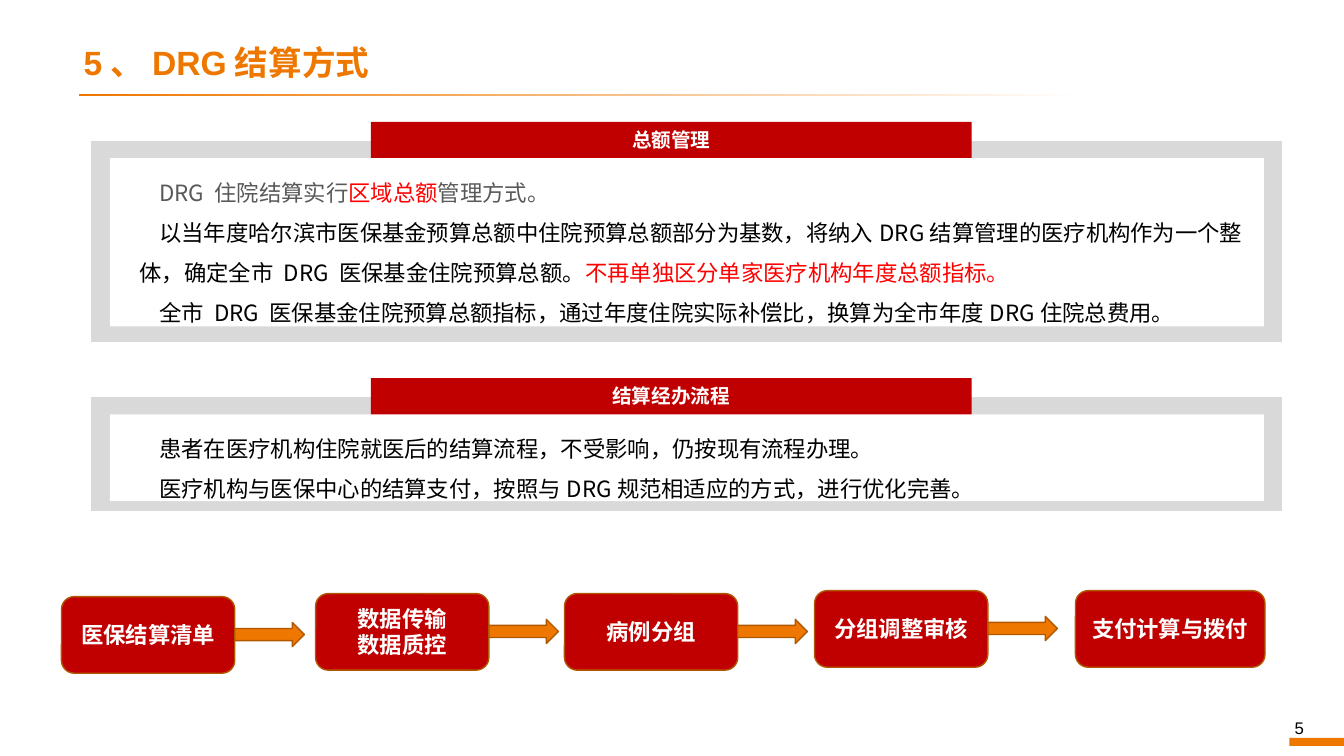
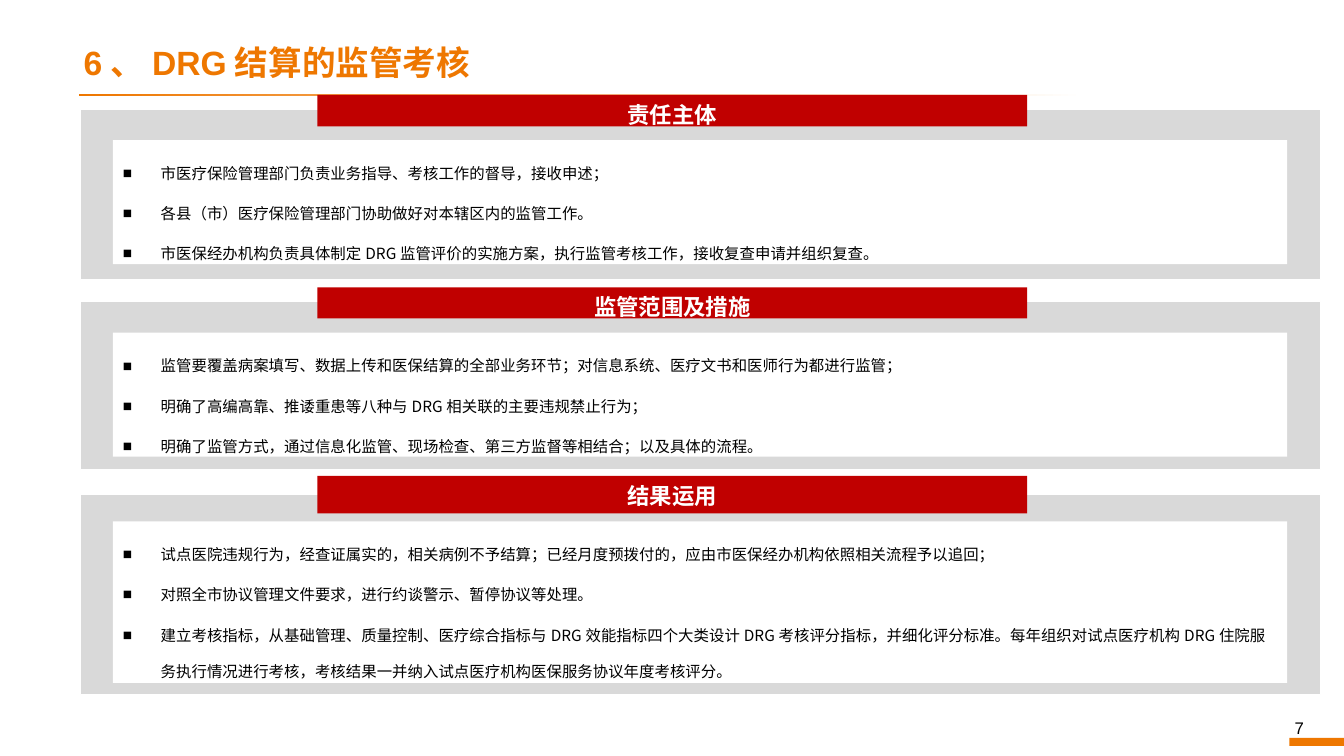
"""Build two slides on DRG settlement and its supervision."""
import pptx
import pptx.dml.color
import pptx.enum.shapes
import pptx.enum.text
import pptx.oxml
import pptx.oxml.ns
import pptx.util

Pt = pptx.util.Pt
colour = pptx.dml.color.RGBColor.from_string
SHAPE = pptx.enum.shapes.MSO_SHAPE
ANCHOR = pptx.enum.text.MSO_ANCHOR
ALIGN = pptx.enum.text.PP_ALIGN
NO_FIT = pptx.enum.text.MSO_AUTO_SIZE.NONE
DRAWING = pptx.oxml.ns.nsdecls("a")

ORANGE, BROWN, RED, BRIGHT = "EE7700", "B05800", "C00000", "FF0000"
GREY, DARK, BLACK, WHITE = "D9D9D9", "595959", "000000", "FFFFFF"
LATIN, CHINESE = "Arial", "Noto Sans CJK SC"

TITLE = {
    "frame": {"vertical_anchor": ANCHOR.BOTTOM},
    "para": {"alignment": ALIGN.LEFT, "line_spacing": 0.9},
    "font": {"name": LATIN, "size": Pt(24), "bold": True},
    "colour": ORANGE,
}
NUMBER = {
    "frame": {"vertical_anchor": ANCHOR.MIDDLE, "margin_top": 0, "margin_bottom": 0},
    "para": {"alignment": ALIGN.CENTER},
    "font": {"name": LATIN, "size": Pt(12)},
    "colour": BLACK,
}
STEP = {
    "frame": {"vertical_anchor": ANCHOR.MIDDLE},
    "para": {"alignment": ALIGN.CENTER, "line_spacing": Pt(18.6)},
    "font": {"name": LATIN, "size": Pt(16), "bold": True},
    "colour": WHITE,
}
BANNER = {
    "frame": {"vertical_anchor": ANCHOR.TOP, "margin_top": Pt(4.6)},
    "para": {"alignment": ALIGN.CENTER},
    "font": {"name": CHINESE, "bold": True},
    "colour": WHITE,
}
PROSE = {
    "frame": {"vertical_anchor": ANCHOR.TOP, "margin_top": Pt(5.6)},
    "para": {"alignment": ALIGN.LEFT, "line_spacing": Pt(28.6), "space_before": Pt(0)},
    "font": {"name": CHINESE, "size": Pt(16), "bold": False},
    "colour": BLACK,
    "indent": (Pt(14), Pt(14)),
}
BULLETS = {
    "frame": {"vertical_anchor": ANCHOR.TOP, "margin_top": Pt(4.2)},
    "para": {"alignment": ALIGN.LEFT, "line_spacing": Pt(26.1), "space_before": Pt(0)},
    "font": {"name": CHINESE, "size": Pt(11), "bold": False},
    "colour": BLACK,
    "indent": (Pt(27), Pt(-27)),
    "bullet": "■",
    "gap": Pt(2.6),
}


def add_box(page, kind, place, fill, line=None):
    """Add a flat preset shape."""
    box = page.shapes.add_shape(kind, *map(Pt, place))
    box.shadow.inherit = False
    box.fill.solid()
    box.fill.fore_color.rgb = colour(fill)
    if line:
        box.line.color.rgb = colour(line)
        box.line.width = Pt(1)
    else:
        box.line.fill.background()
    return box


def write(box, paragraphs, look):
    """Fill a box with paragraphs, each a list of (text, colour) spans or one string."""
    frame = box.text_frame
    frame.word_wrap = True
    frame.auto_size = NO_FIT
    for name, value in look["frame"].items():
        setattr(frame, name, value)
    for index, content in enumerate(paragraphs):
        para = frame.add_paragraph() if index else frame.paragraphs[0]
        if "indent" in look:
            props = para._p.get_or_add_pPr()
            left, first = look["indent"]
            props.set("marL", str(int(left)))
            props.set("indent", str(int(first)))
            marks = [f"<a:buNone {DRAWING}/>"]
            if "bullet" in look:
                marks = [
                    f'<a:buFont {DRAWING} typeface="{LATIN}"/>',
                    f'<a:buChar {DRAWING} char="{look["bullet"]}"/>',
                ]
            for mark in marks:
                props.append(pptx.oxml.parse_xml(mark))
        for name, value in look["para"].items():
            setattr(para, name, value)
        if index and "gap" in look:
            para.space_before = look["gap"]
        if isinstance(content, str):
            content = [(content, look["colour"])]
        for text, shade in content:
            span = para.add_run()
            span.text = text
            for name, value in look["font"].items():
                setattr(span.font, name, value)
            span.font.color.rgb = colour(shade)
            east = pptx.oxml.parse_xml(f'<a:ea {DRAWING} typeface="{CHINESE}"/>')
            span._r.get_or_add_rPr().append(east)


SETTLEMENT = {
    "title": "5、DRG结算方式",
    "number": "5",
    "look": PROSE,
    "banner_size": Pt(14),
    "frame_x": (64.8, 851.8),
    "banner_x": (265, 429.1),
    "body_x": (78.5, 824.4),
    "panels": [
        {
            "heading": "总额管理",
            "banner_y": (87.1, 39.6),
            "frame_y": (100.1, 144.7),
            "body_y": (113, 120.2),
            "content": [
                [("DRG 住院结算实行", DARK), ("区域总额", BRIGHT), ("管理方式。", DARK)],
                [
                    ("以当年度哈尔滨市医保基金预算总额中住院预算总额部分为基数，将纳入DRG结算管理的医疗机构作为一个整体，确定全市 DRG 医保基金住院预算总额。", BLACK),
                    ("不再单独区分单家医疗机构年度总额指标。", BRIGHT),
                ],
                "全市 DRG 医保基金住院预算总额指标，通过年度住院实际补偿比，换算为全市年度DRG住院总费用。",
            ],
        },
        {
            "heading": "结算经办流程",
            "banner_y": (270, 39.6),
            "frame_y": (283, 82.8),
            "body_y": (296, 61.9),
            "content": [
                "患者在医疗机构住院就医后的结算流程，不受影响，仍按现有流程办理。",
                "医疗机构与医保中心的结算支付，按照与DRG规范相适应的方式，进行优化完善。",
            ],
        },
    ],
    "steps": [
        (["医保结算清单"], 43.9, 426.2, 123.8),
        (["数据传输", "数据质控"], 225.4, 424, 123.8),
        (["病例分组"], 403.2, 424, 123.8),
        (["分组调整审核"], 581.8, 421.9, 123.8),
        (["支付计算与拨付"], 768.2, 421.9, 135.4),
    ],
}
SUPERVISION = {
    "title": "6、DRG结算的监管考核",
    "number": "7",
    "look": BULLETS,
    "banner_size": Pt(16),
    "frame_x": (57.6, 885.6),
    "banner_x": (226.8, 506.9),
    "body_x": (80.6, 838.8),
    "panels": [
        {
            "heading": "责任主体",
            "banner_y": (67.7, 22.6),
            "frame_y": (78, 121.5),
            "body_y": (100.1, 88.6),
            "content": [
                "市医疗保险管理部门负责业务指导、考核工作的督导，接收申述；",
                "各县（市）医疗保险管理部门协助做好对本辖区内的监管工作。",
                "市医保经办机构负责具体制定DRG监管评价的实施方案，执行监管考核工作，接收复查申请并组织复查。",
            ],
        },
        {
            "heading": "监管范围及措施",
            "banner_y": (205.2, 22.3),
            "frame_y": (215.3, 120.2),
            "body_y": (237.6, 88.6),
            "content": [
                "监管要覆盖病案填写、数据上传和医保结算的全部业务环节；对信息系统、医疗文书和医师行为都进行监管；",
                "明确了高编高靠、推诿重患等八种与DRG相关联的主要违规禁止行为；",
                "明确了监管方式，通过信息化监管、现场检查、第三方监督等相结合；以及具体的流程。",
            ],
        },
        {
            "heading": "结果运用",
            "banner_y": (340, 26.8),
            "frame_y": (352.8, 143.3),
            "body_y": (372.4, 115.4),
            "content": [
                "试点医院违规行为，经查证属实的，相关病例不予结算；已经月度预拨付的，应由市医保经办机构依照相关流程予以追回；",
                "对照全市协议管理文件要求，进行约谈警示、暂停协议等处理。",
                "建立考核指标，从基础管理、质量控制、医疗综合指标与DRG效能指标四个大类设计DRG考核评分指标，并细化评分标准。每年组织对试点医疗机构DRG住院服务执行情况进行考核，考核结果一并纳入试点医疗机构医保服务协议年度考核评分。",
            ],
        },
    ],
    "steps": [],
}

deck = pptx.Presentation()
deck.slide_width, deck.slide_height = Pt(960), Pt(540)
layout = deck.slide_layouts.get_by_name("Comparison")
pages = [deck.slides.add_slide(layout) for topic in (SETTLEMENT, SUPERVISION)]

title_rule = add_box(pages[0], SHAPE.RECTANGLE, (56.4, 67, 718, 1.4), ORANGE)
title_rule.fill.gradient()
title_rule.fill.gradient_angle = 0
for stop, shade in zip(title_rule.fill.gradient_stops, (ORANGE, WHITE)):
    stop.color.rgb = colour(shade)
corner_bar = add_box(pages[0], SHAPE.RECTANGLE, (921, 527, 39, 5.8), ORANGE)
for shared in (title_rule, corner_bar):
    layout.shapes._spTree.append(shared._element)

for page, topic in zip(pages, (SETTLEMENT, SUPERVISION)):
    title, *bodies = page.placeholders
    title.left, title.top, title.width, title.height = map(Pt, (52.6, 0, 776.2, 62.6))
    write(title, [topic["title"]], TITLE)
    number = page.shapes.add_textbox(*map(Pt, (903.6, 512.6, 49, 14.4)))
    write(number, [topic["number"]], NUMBER)

    for panel, body in zip(topic["panels"], bodies):
        places = {}
        for part in ("frame", "banner", "body"):
            (left, width), (top, height) = topic[part + "_x"], panel[part + "_y"]
            places[part] = (left, top, width, height)
        add_box(page, SHAPE.RECTANGLE, places["frame"], GREY, WHITE)
        banner = add_box(page, SHAPE.RECTANGLE, places["banner"], RED)
        size = topic["banner_size"]
        heading_look = {
            **BANNER,
            "para": {**BANNER["para"], "line_spacing": Pt(round(size.pt * 1.19, 1))},
            "font": {**BANNER["font"], "size": size},
        }
        write(banner, [panel["heading"]], heading_look)
        body.left, body.top, body.width, body.height = map(Pt, places["body"])
        body.fill.solid()
        body.fill.fore_color.rgb = colour(WHITE)
        write(body, panel["content"], topic["look"])
        page.shapes._spTree.append(body._element)

    for spare in bodies[len(topic["panels"]):]:
        spare._element.getparent().remove(spare._element)

    for index, (lines, left, top, width) in enumerate(topic["steps"]):
        step = add_box(page, SHAPE.ROUNDED_RECTANGLE, (left, top, width, 54.7), RED, BROWN)
        write(step, lines, STEP)
        if index < len(topic["steps"]) - 1:
            add_box(page, SHAPE.RIGHT_ARROW, (left + width, top + 18.4, 49.7, 17.3), ORANGE, BROWN)

deck.save("out.pptx")
